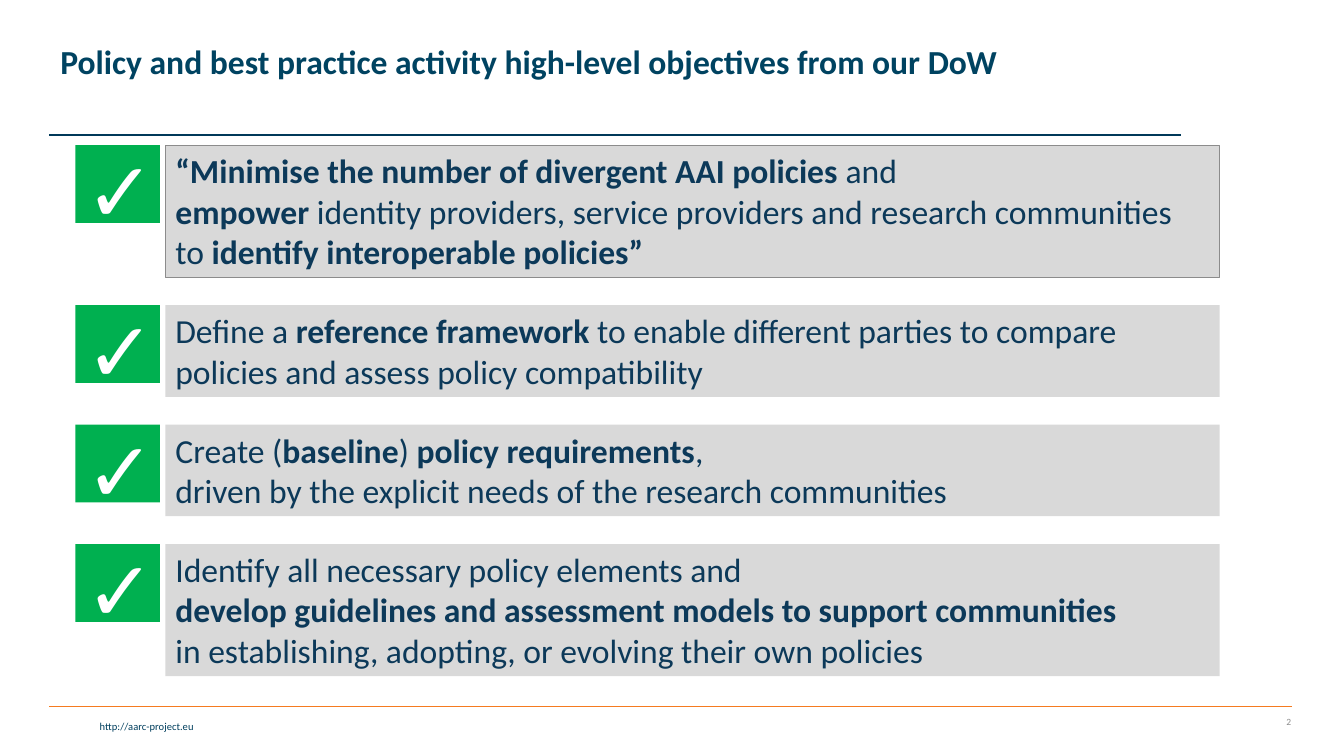
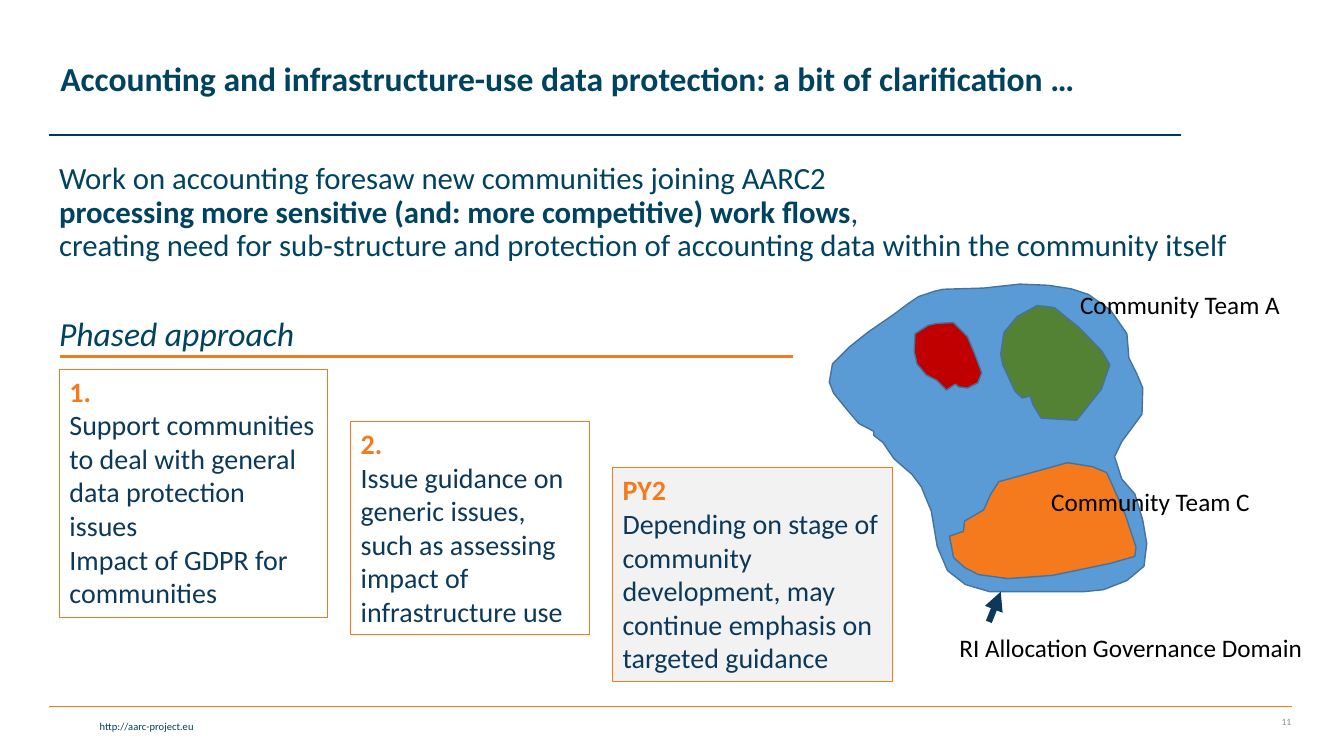
from lxml import etree
from pptx import Presentation
from pptx import util as u
from pptx.dml.color import RGBColor
from pptx.enum import shapes, text
from pptx.oxml.ns import qn

Cm, Pt = u.Cm, u.Pt

TITLE, BODY, NAVY = "004361", "004360", "0C3959"
RULE, ORANGE, FOOT_ORANGE = "003959", "F57A1E", "F57B20"
URL, GREY, BORDER = "003F5E", "8C8C8C", "8C8C8C"
PANEL, PALE, GREEN = "D9D9D9", "F2F2F2", "00B050"
WHITE, BLACK, OUTLINE = "FFFFFF", "000000", "43739E"

OBJECTIVES = [
    "**“Minimise the number of divergent AAI policies** and\n"
    "**empower** identity providers, service providers and research communities\n"
    "to **identify interoperable policies”**",
    "Define a **reference framework** to enable different parties to compare "
    "policies and assess policy compatibility",
    "Create (**baseline**) **policy requirements**,\n"
    "driven by the explicit needs of the research communities",
    "Identify all necessary policy elements and\n"
    "**develop guidelines and assessment models to support communities**\n"
    "in establishing, adopting, or evolving their own policies",
]
OBJECTIVE_LINES = [3, 2, 2, 3]

PHASES = [
    (1.5, 9.3, 6.76, 6.25, None, "1.",
     ["Support communities to deal with general data protection\nissues",
      "Impact of GDPR for communities"]),
    (8.84, 10.62, 6.02, 5.38, None, "2.",
     ["Issue guidance on generic issues, such as assessing impact of "
      "infrastructure use"]),
    (15.44, 11.79, 7.06, 5.38, PALE, "PY2",
     ["Depending on stage of community development, may continue emphasis on "
      "targeted guidance"]),
]

DOMAIN = [
    (22.02, 10.87), (21.64, 10.67), (21.36, 10.34), (21.01, 9.91), (20.9, 9.63),
    (20.98, 9.17), (21.41, 8.74), (21.89, 8.36), (22.53, 7.92), (22.89, 7.65),
    (23.16, 7.47), (23.55, 7.34), (23.77, 7.29), (24.79, 7.26), (25.7, 7.16),
    (26.42, 7.19), (27.0, 7.28), (27.43, 7.42), (27.99, 7.82), (28.4, 8.41),
    (28.45, 9.02), (28.65, 9.42), (28.8, 9.78), (28.78, 10.44), (28.27, 11.13),
    (28.09, 11.51), (28.27, 12.07), (28.6, 12.45), (28.8, 13.11), (28.9, 13.7),
    (28.83, 14.27), (28.4, 14.63), (27.81, 14.86), (27.31, 14.91),
    (24.94, 14.91), (24.33, 14.73), (23.88, 14.38), (23.62, 13.77),
    (23.47, 12.88), (23.22, 12.27), (22.99, 11.96), (22.53, 11.56),
    (22.25, 11.15), (22.02, 10.97),
]
TEAM_RED = [
    (23.85, 9.83), (23.6, 9.58), (23.34, 9.45), (23.11, 9.17), (23.04, 8.86),
    (23.06, 8.41), (23.39, 8.2), (23.6, 8.15), (24.03, 8.13), (24.16, 8.26),
    (24.38, 8.48), (24.54, 8.86), (24.69, 9.25), (24.74, 9.4), (24.64, 9.65),
    (24.38, 9.78), (24.16, 9.75), (24.08, 9.68),
]
TEAM_GREEN = [
    (25.76, 10.03), (25.58, 9.86), (25.27, 9.19), (25.22, 8.92), (25.3, 8.38),
    (25.63, 7.98), (26.14, 7.7), (26.57, 7.75), (27.2, 8.26), (27.76, 8.84),
    (27.97, 9.19), (27.76, 9.8), (27.28, 10.41), (27.13, 10.59),
    (26.24, 10.54), (26.04, 10.21), (25.96, 9.98),
]
TEAM_ORANGE = [
    (27.97, 14.2), (28.6, 14.02), (28.63, 13.79), (28.37, 13.0), (28.12, 12.42),
    (27.89, 11.91), (27.53, 11.76), (26.9, 11.66), (25.17, 12.14),
    (24.97, 12.45), (24.79, 12.85), (24.31, 13.13), (24.28, 13.39),
    (23.93, 13.51), (24.03, 14.05), (24.31, 14.3), (24.66, 14.48),
    (25.4, 14.58), (26.52, 14.5),
]


def rgb(value):
    return RGBColor.from_string(value)


def write(sp, content, size, color, font="Calibri", bold=False, italic=False,
          align=text.PP_ALIGN.LEFT, spacing=None, before=None):
    """Append a paragraph; ** switches bold and a newline breaks the line."""
    tf = sp.text_frame
    p = tf.add_paragraph() if tf.text else tf.paragraphs[0]
    p.alignment, p.line_spacing = align, spacing
    if before:
        p.space_before = Pt(before)
    for i, piece in enumerate(content.split("**")):
        for j, line in enumerate(piece.split("\n")):
            if j:
                p.add_line_break()
            if not line:
                continue
            r = p.add_run()
            r.text = line
            r.font.name, r.font.size = font, Pt(size)
            r.font.bold, r.font.italic = bold or i % 2 == 1, italic
            r.font.color.rgb = rgb(color)


def add_text_box(s, x, y, w, h, wrap=True, anchor=text.MSO_ANCHOR.TOP):
    sp = s.shapes.add_textbox(Cm(x), Cm(y), Cm(w), Cm(h))
    sp.text_frame.word_wrap = wrap
    sp.text_frame.vertical_anchor = anchor
    return sp


def paint(sp, fill, line, width):
    sp.shadow.inherit = False
    if fill:
        sp.fill.solid()
        sp.fill.fore_color.rgb = rgb(fill)
    else:
        sp.fill.background()
    if line:
        sp.line.color.rgb = rgb(line)
        sp.line.width = Pt(width)
    else:
        sp.line.fill.background()


def add_box(s, x, y, w, h, fill=None, line=None):
    sp = s.shapes.add_shape(shapes.MSO_SHAPE.RECTANGLE, Cm(x), Cm(y), Cm(w), Cm(h))
    paint(sp, fill, line, 0.75)
    sp.text_frame.word_wrap = True
    sp.text_frame.vertical_anchor = text.MSO_ANCHOR.TOP
    return sp


def add_blob(s, points, fill):
    points = [(Cm(x), Cm(y)) for x, y in points]
    builder = s.shapes.build_freeform(*points[0])
    builder.add_line_segments(points[1:], close=True)
    paint(builder.convert_to_shape(), fill, OUTLINE, 1)


def add_line(s, x1, y1, x2, y2, color, width, arrow=False):
    c = s.shapes.add_connector(shapes.MSO_CONNECTOR.STRAIGHT,
                               Cm(x1), Cm(y1), Cm(x2), Cm(y2))
    c.line.color.rgb = rgb(color)
    c.line.width = Pt(width)
    if arrow:
        etree.SubElement(c.line._get_or_add_ln(), qn("a:tailEnd"), type="triangle")
    etree.SubElement(c._element.spPr, qn("a:effectLst"))


def add_slide(prs, title, number, title_height):
    """Add a slide with the shared title, rules and footer."""
    s = prs.slides.add_slide(prs.slide_layouts[6])
    middle, right = text.MSO_ANCHOR.MIDDLE, text.PP_ALIGN.RIGHT
    add_line(s, 1.24, 17.81, 32.56, 17.81, FOOT_ORANGE, 1)
    add_line(s, 1.24, 3.4, 29.77, 3.4, RULE, 1)
    write(add_text_box(s, 0.08, 18.01, 5.05, 0.58), "http://aarc-project.eu",
          7.5, URL, align=right)
    write(add_text_box(s, 30.73, 17.81, 2.06, 0.76, anchor=middle), number,
          6.8, GREY, align=right)
    write(add_text_box(s, 1.27, 0.2, 26.7, title_height, anchor=middle), title,
          24, TITLE, bold=True, spacing=0.9)
    return s


def add_objective(s, y, h, content, border):
    add_box(s, 1.9, y, 2.13, 1.96, GREEN)
    write(add_box(s, 4.17, y, 26.57, h, PANEL, border), content, 24, NAVY)
    write(add_text_box(s, 1.9, y - 0.29, 1.78, 2.82), "✓", 60, WHITE, font="Arial")


def add_phase(s, x, y, w, h, fill, heading, paragraphs):
    sp = add_box(s, x, y, w, h, fill, ORANGE)
    write(sp, heading, 20, ORANGE, bold=True)
    for content in paragraphs:
        write(sp, content, 20, NAVY)


def add_label(s, x, y, w, content):
    write(add_text_box(s, x, y, w, 1.02, wrap=False), content, 18, BLACK)


def build_objectives(prs):
    s = add_slide(prs, "Policy and best practice activity high-level objectives "
                  "from our DoW", "2", 2.82)
    y = 3.66
    for i, (content, lines) in enumerate(zip(OBJECTIVES, OBJECTIVE_LINES)):
        h = 0.27 + 1.02 * lines
        add_objective(s, y, h, content, None if i else BORDER)
        y += h + 0.7


def build_accounting(prs):
    s = add_slide(prs, "Accounting and infrastructure-use data protection: "
                  "a bit of clarification …", "11", 3.68)
    body = add_text_box(s, 1.24, 3.99, 30.3, 5.31)
    write(body, "Work on accounting foresaw new communities joining AARC2\n"
          "**processing more sensitive (and: more competitive) work flows**,\n"
          "creating need for sub-structure and protection of accounting data "
          "within the community itself", 22, BODY, spacing=0.9)
    write(body, "Phased approach", 24, BODY, italic=True, spacing=0.9, before=39)

    for points, fill in [(DOMAIN, "5B9BD5"), (TEAM_RED, "C00000"),
                         (TEAM_GREEN, "548235"), (TEAM_ORANGE, ORANGE)]:
        add_blob(s, points, fill)
    add_label(s, 23.93, 15.8, 9.25, "RI Allocation Governance Domain")
    add_label(s, 26.97, 7.16, 5.61, "Community Team A")
    add_label(s, 26.24, 12.14, 5.59, "Community Team C")
    add_line(s, 24.92, 15.67, 25.22, 14.91, NAVY, 4.5, arrow=True)

    add_line(s, 1.5, 8.99, 19.99, 8.99, ORANGE, 2.25)
    for phase in PHASES:
        add_phase(s, *phase)


def main():
    prs = Presentation()
    prs.slide_width, prs.slide_height = Cm(33.87), Cm(19.05)
    build_objectives(prs)
    build_accounting(prs)
    prs.save("out.pptx")


if __name__ == "__main__":
    main()
